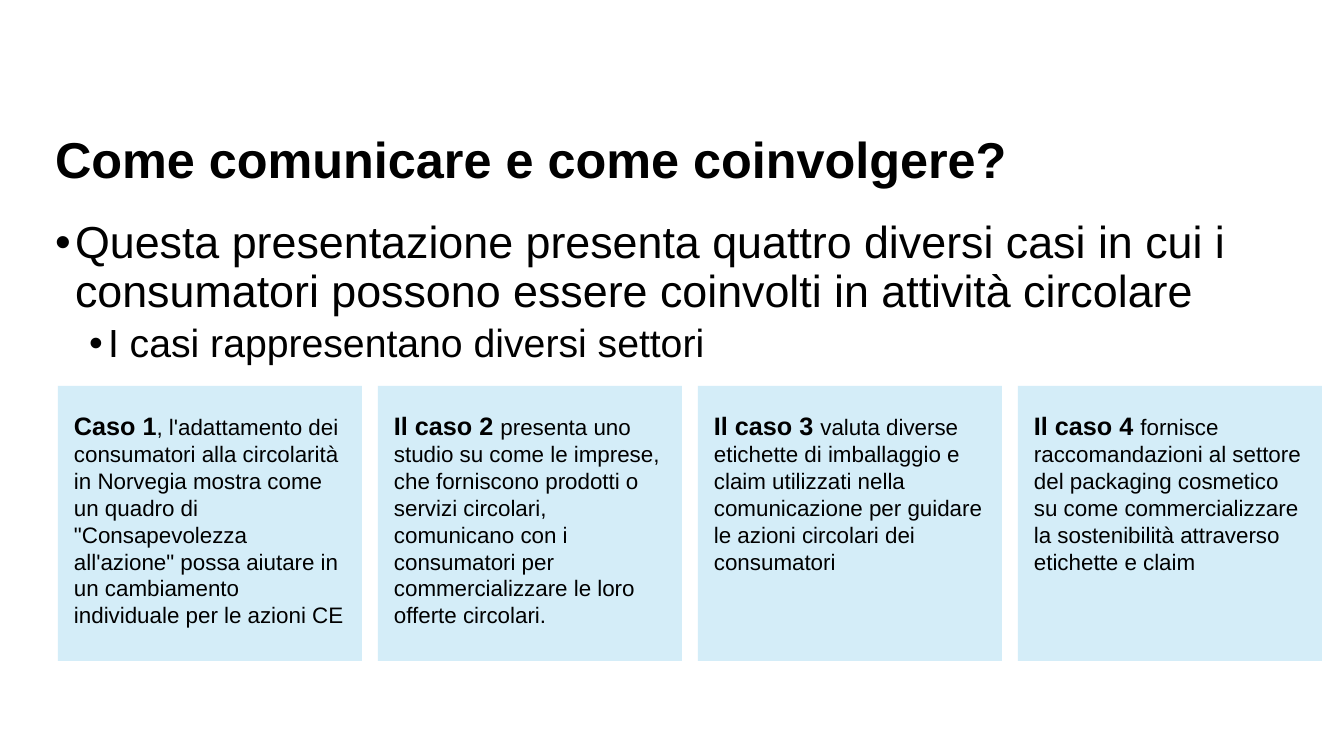
from pptx import Presentation
from pptx import util as u
from pptx.dml.color import RGBColor
from pptx.enum import shapes, text
from pptx.oxml.ns import qn
from lxml import etree

COLOURS = {"text": "000000", "card": "D4EDF8"}
FONT = "Arial"
SCALE = 914400 / 100.8
CARDS = [
    ("Caso 1", ", l'adattamento dei consumatori alla circolarità in Norvegia mostra come un quadro di "
     "\"Consapevolezza all'azione\" possa aiutare in un cambiamento individuale per le azioni CE"),
    ("Il caso 2 ", "presenta uno studio su come le imprese, che forniscono prodotti o servizi circolari, "
     "comunicano con i consumatori per commercializzare le loro offerte circolari."),
    ("Il caso 3 ", "valuta diverse etichette di imballaggio e claim utilizzati nella comunicazione "
     "per guidare le azioni circolari dei consumatori"),
    ("Il caso 4 ", "fornisce raccomandazioni al settore del packaging cosmetico su come commercializzare "
     "la sostenibilità attraverso etichette e claim"),
]
BULLETS = [
    dict(content="Questa presentazione presenta quattro diversi casi in cui i consumatori "
         "possono essere coinvolti in attività circolare", size=32, level=0, margin=20, hanging=22, before=0),
    dict(content="I casi rappresentano diversi settori", size=28, level=1, margin=53, hanging=19, before=5),
]


def px(length):
    return u.Emu(round(length * SCALE))


def add_text(paragraph, content, size, bold=False):
    run = paragraph.add_run()
    run.text = content
    run.font.name = FONT
    run.font.size = u.Pt(size)
    run.font.bold = bold
    run.font.color.rgb = RGBColor.from_string(COLOURS["text"])


class SlideBuilder:
    """Adds consistently styled elements to one slide."""

    def __init__(self, presentation):
        self.slide = presentation.slides.add_slide(presentation.slide_layouts[5])

    def frame(self, shape, inset_x, inset_y, anchor):
        frame = shape.text_frame
        frame.word_wrap = True
        frame.auto_size = text.MSO_AUTO_SIZE.NONE
        frame.vertical_anchor = anchor
        frame.margin_left = frame.margin_right = px(inset_x)
        frame.margin_top = frame.margin_bottom = px(inset_y)
        return frame

    def title(self, content, left, top, width, height):
        shape = self.slide.shapes.title
        shape.left, shape.top, shape.width, shape.height = map(px, (left, top, width, height))
        paragraph = self.frame(shape, 10, 5, text.MSO_ANCHOR.BOTTOM).paragraphs[0]
        paragraph.alignment = text.PP_ALIGN.LEFT
        paragraph.line_spacing = 0.9
        add_text(paragraph, content, size=36, bold=True)

    def bullets(self, items, left, top, width, height):
        shape = self.slide.shapes.add_textbox(*map(px, (left, top, width, height)))
        frame = self.frame(shape, 10, 5, text.MSO_ANCHOR.TOP)
        for index, item in enumerate(items):
            paragraph = frame.add_paragraph() if index else frame.paragraphs[0]
            paragraph.level = item["level"]
            paragraph.line_spacing = 0.9
            paragraph.space_before = u.Pt(item["before"])
            properties = paragraph._p.get_or_add_pPr()
            properties.set("marL", str(px(item["margin"])))
            properties.set("indent", str(-px(item["hanging"])))
            colour = etree.SubElement(properties, qn("a:buClr"))
            etree.SubElement(colour, qn("a:srgbClr"), val=COLOURS["text"])
            etree.SubElement(properties, qn("a:buFont"), typeface=FONT)
            etree.SubElement(properties, qn("a:buChar"), char="•")
            add_text(paragraph, item["content"], item["size"])

    def card(self, heading, body, left, top, width, height):
        shape = self.slide.shapes.add_shape(shapes.MSO_SHAPE.RECTANGLE, *map(px, (left, top, width, height)))
        shape.shadow.inherit = False
        shape.fill.solid()
        shape.fill.fore_color.rgb = RGBColor.from_string(COLOURS["card"])
        shape.line.fill.background()
        paragraph = self.frame(shape, 16, 24, text.MSO_ANCHOR.TOP).paragraphs[0]
        paragraph.alignment = text.PP_ALIGN.LEFT
        add_text(paragraph, heading, size=18, bold=True)
        add_text(paragraph, body, size=16)


def main():
    presentation = Presentation()
    presentation.slide_width, presentation.slide_height = px(1344), px(756)
    builder = SlideBuilder(presentation)
    builder.title("Come comunicare e come coinvolgere?", 45, 122, 1158, 72)
    for index, (heading, body) in enumerate(CARDS):
        builder.card(heading, body, left=58 + 320 * index, top=386, width=304, height=275)
    builder.bullets(BULLETS, 45, 215, 1261, 148)
    presentation.save("out.pptx")


if __name__ == "__main__":
    main()
